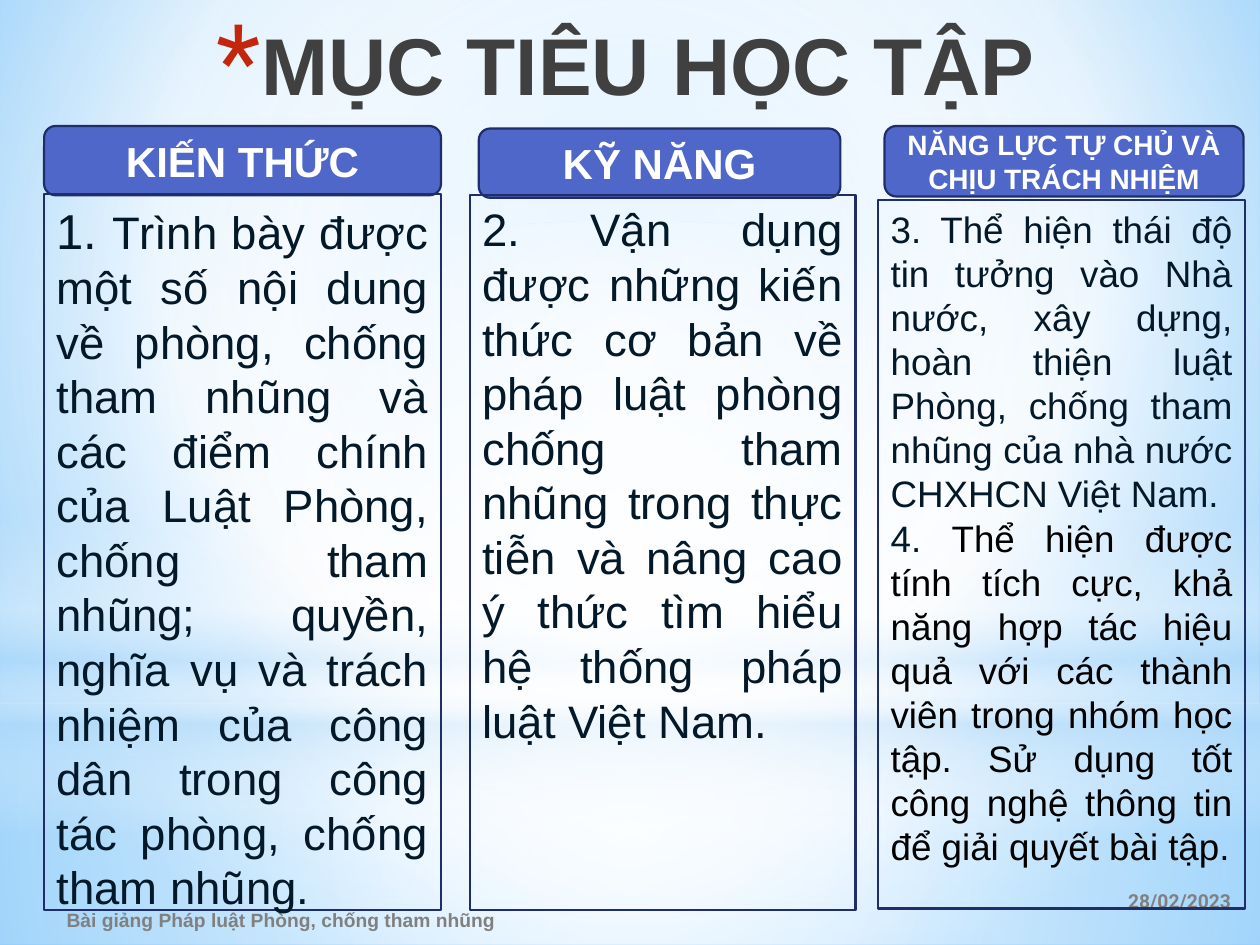
from lxml import etree
from pptx import Presentation
from pptx.dml.color import RGBColor
from pptx.enum.shapes import MSO_SHAPE
from pptx.enum.text import MSO_ANCHOR, MSO_AUTO_SIZE, PP_ALIGN
from pptx.oxml.ns import qn
from pptx.util import Inches, Pt

RECT = MSO_SHAPE.RECTANGLE
ROUNDED = MSO_SHAPE.ROUNDED_RECTANGLE
OVAL = MSO_SHAPE.OVAL
TOP, MIDDLE = MSO_ANCHOR.TOP, MSO_ANCHOR.MIDDLE
NO_AUTOFIT = MSO_AUTO_SIZE.NONE
LEFT, CENTER, RIGHT, JUSTIFY = (
    PP_ALIGN.LEFT, PP_ALIGN.CENTER, PP_ALIGN.RIGHT, PP_ALIGN.JUSTIFY)

WHITE = RGBColor(0xFF, 0xFF, 0xFF)
BLACK = RGBColor(0x00, 0x00, 0x00)
GRAY = RGBColor(0x80, 0x80, 0x80)
CHARCOAL = RGBColor(0x40, 0x40, 0x40)
RED = RGBColor(0xC3, 0x26, 0x0C)
INK = RGBColor(0x03, 0x18, 0x28)
INDIGO = RGBColor(0x4E, 0x67, 0xC8)
NAVY = RGBColor(0x1F, 0x2E, 0x69)
PALE = RGBColor(0xB4, 0xDC, 0xFA)
SKY = RGBColor(0x9E, 0xD5, 0xFF)
AZURE = RGBColor(0x5B, 0xB9, 0xFF)

CENTERED = (50, 50, 50, 50)
GLOWS = [
    (RECT, (0, 5.58, 10, 1.92), [(0, WHITE, 91), (37, WHITE, 76), (100, PALE, 79)], CENTERED),
    (RECT, (0, 0, 10, 5.58), [(0, WHITE, 89), (48, WHITE, 62), (100, PALE, 79)], CENTERED),
    (RECT, (0, 4.12, 10, 2.5),
     [(0, WHITE, 0), (29, WHITE, 30), (45, PALE, 40),
      (55, WHITE, 26), (65, PALE, 60), (100, WHITE, 0)], None),
    (OVAL, (0, 1.75, 10, 5.58), [(0, WHITE, 100), (56, WHITE, 0)], CENTERED),
]
COLUMNS = [
    ("KIẾN THỨC", 24, (0.35, 1, 3.15, 0.55), (0.35, 1.54, 3.15, 5.68),
     [[("1. ", 28, INK),
       ("Trình bày được một số nội dung về phòng, chống tham nhũng và các điểm "
        "chính của Luật Phòng, chống tham nhũng; quyền, nghĩa vụ và trách nhiệm "
        "của công dân trong công tác phòng, chống tham nhũng.", 26, INK)]]),
    ("KỸ NĂNG", 24, (3.8, 1.02, 2.87, 0.55), (3.73, 1.55, 3.06, 5.67),
     [[("2. Vận dụng được những kiến thức cơ bản về pháp luật phòng chống tham "
        "nhũng trong thực tiễn và nâng cao ý thức tìm hiểu hệ thống pháp luật "
        "Việt Nam.", 26, INK)]]),
    ("NĂNG LỰC TỰ CHỦ VÀ CHỊU TRÁCH NHIỆM", 16, (7.02, 1, 2.85, 0.56),
     (6.97, 1.59, 2.91, 5.62),
     [[("3. Thể hiện thái độ tin tưởng vào Nhà nước, xây dựng, hoàn thiện luật "
        "Phòng, chống tham nhũng của nhà nước CHXHCN Việt Nam.", 21, INK)],
      [("4. ", 21, INK),
       ("Thể hiện được tính tích cực, khả năng hợp tác hiệu quả với các thành "
        "viên trong nhóm học tập. Sử dụng tốt công nghệ thông tin để giải quyết "
        "bài tập.", 21, BLACK)]]),
]


class ObjectivesSlide:
    """Holds the style of the objectives slide and draws its elements."""

    def __init__(self, slide, font="Arial", accent_font="Roboto"):
        self.slide = slide
        self.font = font
        self.accent_font = accent_font

    def gradient(self, fill, properties, stops, focus):
        fill.gradient()
        grad = properties.find(qn("a:gradFill"))
        for child in list(grad):
            grad.remove(child)
        stop_list = etree.SubElement(grad, qn("a:gsLst"))
        for position, color, opacity in stops:
            stop = etree.SubElement(stop_list, qn("a:gs"), pos=str(position * 1000))
            tint = etree.SubElement(stop, qn("a:srgbClr"), val=str(color))
            if opacity < 100:
                etree.SubElement(tint, qn("a:alpha"), val=str(opacity * 1000))
        if focus:
            shade = etree.SubElement(grad, qn("a:path"), path="circle")
            edges = {side: str(value * 1000) for side, value in zip("ltrb", focus)}
            etree.SubElement(shade, qn("a:fillToRect"), edges)
        else:
            etree.SubElement(grad, qn("a:lin"), ang="5400000", scaled="0")

    def background(self, stops, focus):
        fill = self.slide.background.fill
        fill.solid()
        properties = self.slide.element.find(".//" + qn("p:bgPr"))
        self.gradient(fill, properties, stops, focus)

    def shape(self, kind, box):
        shape = self.slide.shapes.add_shape(kind, *map(Inches, box))
        shape.shadow.inherit = False
        return shape

    def glow(self, kind, box, stops, focus):
        glow = self.shape(kind, box)
        glow.line.fill.background()
        self.gradient(glow.fill, glow.element.spPr, stops, focus)

    def format_run(self, run, size, color, bold=False, font=None):
        run.font.name = font or self.font
        run.font.size = Pt(size)
        run.font.bold = bold
        run.font.color.rgb = color

    def label(self, frame, text, size, color, align, font=None):
        frame.word_wrap = True
        frame.vertical_anchor = MIDDLE
        frame.text = text
        paragraph = frame.paragraphs[0]
        paragraph.alignment = align
        self.format_run(paragraph.runs[0], size, color, True, font)

    def title(self, text, box):
        title = self.slide.shapes.title
        title.left, title.top, title.width, title.height = map(Inches, box)
        frame = title.text_frame
        self.label(frame, text, 46, CHARCOAL, CENTER)
        frame.auto_size = NO_AUTOFIT
        properties = frame.paragraphs[0]._p.get_or_add_pPr()
        properties.set("marL", str(Inches(0.35)))
        properties.set("indent", str(Inches(-0.35)))
        bullet_color = etree.SubElement(properties, qn("a:buClr"))
        etree.SubElement(bullet_color, qn("a:srgbClr"), val=str(RED))
        etree.SubElement(properties, qn("a:buSzPct"), val="128000")
        etree.SubElement(properties, qn("a:buFont"), typeface=self.accent_font)
        etree.SubElement(properties, qn("a:buChar"), char="*")
        self.slide.shapes.element.append(title.element)

    def footer(self, text, box, align, font=None):
        footer = self.slide.shapes.add_textbox(*map(Inches, box))
        self.label(footer.text_frame, text, 11, GRAY, align, font)

    def outline(self, shape):
        shape.line.color.rgb = NAVY
        shape.line.width = Pt(1.25)

    def heading(self, text, size, box):
        heading = self.shape(ROUNDED, box)
        heading.fill.solid()
        heading.fill.fore_color.rgb = INDIGO
        self.outline(heading)
        self.label(heading.text_frame, text, size, WHITE, CENTER)

    def panel(self, box, paragraphs):
        panel = self.shape(RECT, box)
        panel.fill.background()
        self.outline(panel)
        frame = panel.text_frame
        frame.word_wrap = True
        frame.vertical_anchor = TOP
        for index, pieces in enumerate(paragraphs):
            paragraph = frame.add_paragraph() if index else frame.paragraphs[0]
            paragraph.alignment = JUSTIFY
            for text, size, color in pieces:
                run = paragraph.add_run()
                run.text = text
                self.format_run(run, size, color)


def main():
    deck = Presentation()
    deck.slide_width, deck.slide_height = Inches(10), Inches(7.5)
    objectives = ObjectivesSlide(deck.slides.add_slide(deck.slide_layouts[5]))
    objectives.background(
        [(0, SKY, 100), (60, WHITE, 100), (100, AZURE, 100)], (20, 10, 20, 60))
    for glow in GLOWS:
        objectives.glow(*glow)
    objectives.footer("28/02/2023", (7.12, 6.95, 2.75, 0.4), RIGHT, objectives.accent_font)
    objectives.footer(
        "Bài giảng Pháp luật Phòng, chống tham nhũng", (0.43, 7.1, 3.67, 0.4), LEFT)
    objectives.title("MỤC TIÊU HỌC TẬP", (1.38, 0.03, 7.17, 0.94))
    for heading, size, heading_box, panel_box, paragraphs in COLUMNS:
        objectives.heading(heading, size, heading_box)
        objectives.panel(panel_box, paragraphs)
    deck.save("out.pptx")


if __name__ == "__main__":
    main()
